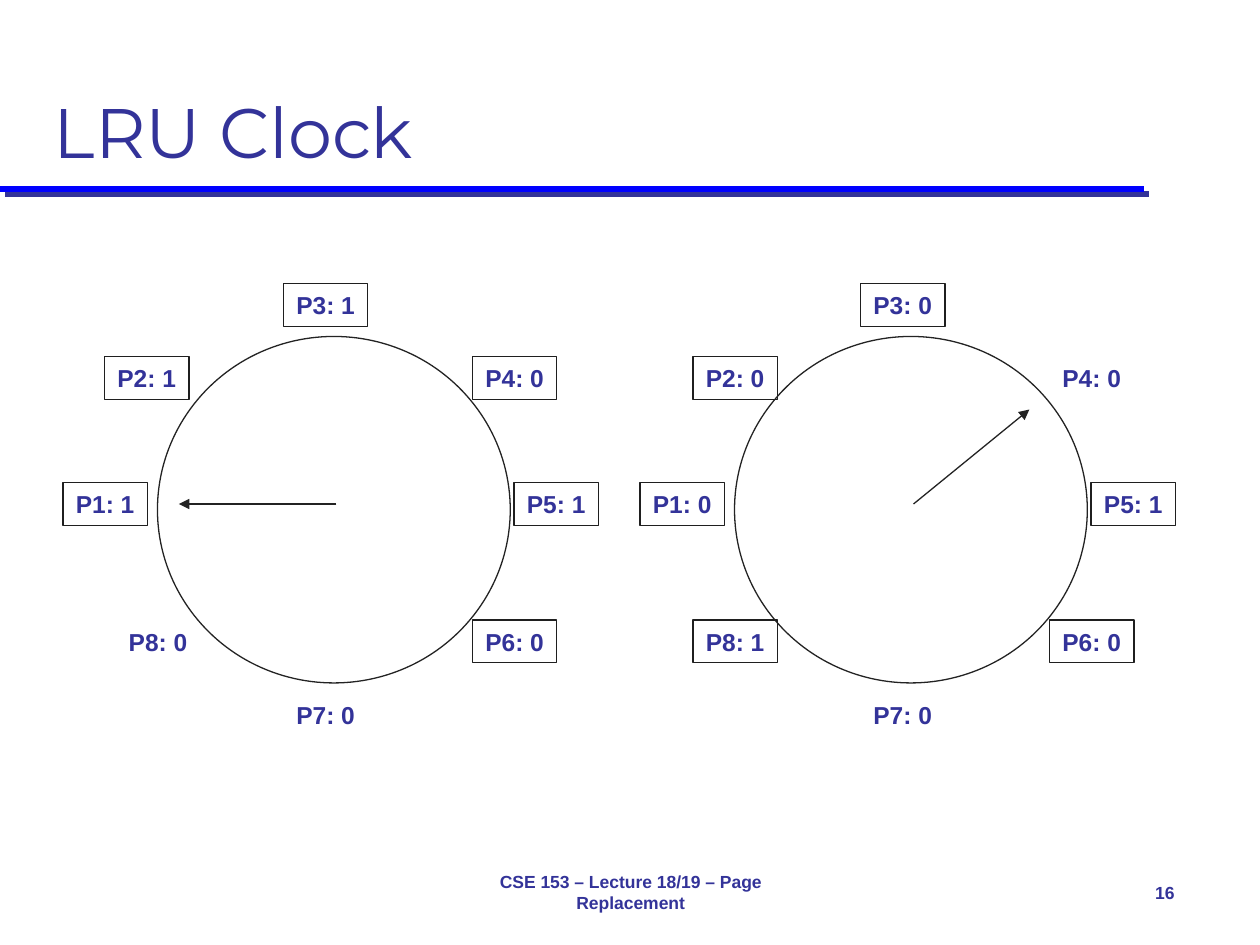
import lxml.etree
import pptx
import pptx.dml.color
import pptx.enum.shapes
import pptx.enum.text
import pptx.oxml.ns
import pptx.util

Inches = pptx.util.Inches
Pt = pptx.util.Pt
Align = pptx.enum.text.PP_ALIGN
Anchor = pptx.enum.text.MSO_ANCHOR
Shapes = pptx.enum.shapes.MSO_SHAPE

COLORS = {
    "text": "333399",
    "rule": "0000FF",
    "outline": "232323",
    "border": "1F1F1F",
    "paper": "FFFFFF",
}
LABEL_SIZE = (0.67, 0.34)
LABEL_SPOTS = {
    "P1": (0.5, 3.83),
    "P2": (0.83, 2.83),
    "P3": (2.25, 2.25),
    "P4": (3.75, 2.83),
    "P5": (4.08, 3.83),
    "P6": (3.75, 4.92),
    "P7": (2.25, 5.5),
    "P8": (0.92, 4.92),
}
CLOCKS = [
    {
        "offset": 0,
        "bits": "11101000",
        "unboxed": {"P7", "P8"},
        "hand": ((2.67, 4), (1.42, 4)),
        "moved": {},
    },
    {
        "offset": 4.58,
        "bits": "00001001",
        "unboxed": {"P4", "P7"},
        "hand": ((2.67, 4), (3.59, 3.25)),
        "moved": {"P2": (0.92, 2.83)},
    },
]


def color(name):
    return pptx.dml.color.RGBColor.from_string(COLORS[name])


def write_text(shape, text, size=14, font="Arial", bold=True, align=Align.CENTER,
               anchor=Anchor.MIDDLE, wrap=True, side=0.1):
    frame = shape.text_frame
    frame.word_wrap = wrap
    frame.vertical_anchor = anchor
    frame.margin_left = frame.margin_right = Inches(side)
    frame.margin_top = frame.margin_bottom = Inches(0.05)
    para = frame.paragraphs[0]
    para.alignment = align
    span = para.add_run()
    span.text = text
    span.font.size = Pt(size)
    span.font.name = font
    span.font.bold = bold
    span.font.color.rgb = color("text")


class ClockPage:
    def __init__(self, page):
        self.page = page

    def text(self, text, left, top, width, height, **style):
        box = self.page.shapes.add_textbox(*map(Inches, (left, top, width, height)))
        write_text(box, text, **style)

    def shape(self, kind, left, top, width, height, line, fill=None):
        shape = self.page.shapes.add_shape(kind, *map(Inches, (left, top, width, height)))
        shape.shadow.inherit = False
        if fill:
            shape.fill.solid()
            shape.fill.fore_color.rgb = color(fill)
        else:
            shape.fill.background()
        shape.line.color.rgb = color(line)
        shape.line.width = Pt(0.75)
        return shape

    def line(self, start, end, line="outline", width=0.75, arrow=False, shadow=None):
        connector = self.page.shapes.add_connector(
            pptx.enum.shapes.MSO_CONNECTOR.STRAIGHT, *map(Inches, (*start, *end)))
        connector.line.color.rgb = color(line)
        connector.line.width = Pt(width)
        name = pptx.oxml.ns.qn
        if arrow:
            lxml.etree.SubElement(connector.line._get_or_add_ln(), name("a:tailEnd"), type="triangle")
        effects = lxml.etree.SubElement(connector._element.spPr, name("a:effectLst"))
        if shadow:
            cast = lxml.etree.SubElement(effects, name("a:outerShdw"), blurRad="0",
                                         dist=str(Pt(4.2)), dir="2700000", algn="ctr", rotWithShape="0")
            lxml.etree.SubElement(cast, name("a:srgbClr"), val=COLORS[shadow])

    def label(self, text, left, top, boxed):
        if boxed:
            box = self.shape(Shapes.RECTANGLE, left, top, *LABEL_SIZE, line="border")
            write_text(box, text, side=0)
        else:
            self.text(text, left, top, *LABEL_SIZE, side=0)

    def clock(self, offset, bits, unboxed, hand, moved):
        self.shape(Shapes.OVAL, 1.25 + offset, 2.67, 2.8, 2.75, line="outline", fill="paper")
        spots = {**LABEL_SPOTS, **moved}
        for (name, (left, top)), bit in zip(spots.items(), bits):
            self.label(f"{name}: {bit}", left + offset, top, name not in unboxed)
        start, end = [(x + offset, y) for x, y in hand]
        self.line(start, end, arrow=True)


def main():
    deck = pptx.Presentation()
    deck.slide_width, deck.slide_height = Inches(10), Inches(7.5)
    page = ClockPage(deck.slides.add_slide(deck.slide_layouts[6]))
    page.line((0, 1.5), (9.08, 1.5), line="rule", width=3.5, shadow="text")
    page.text("LRU Clock", 0.33, 0.17, 9.33, 1.25, size=40, font="Montserrat",
              bold=False, align=Align.LEFT, anchor=Anchor.BOTTOM)
    page.text("CSE 153 – Lecture 18/19 – Page Replacement", 3.42, 6.83, 3.17, 0.5,
              size=10, wrap=False)
    page.text("16", 8.75, 6.83, 0.67, 0.5, size=10, align=Align.RIGHT, wrap=False)
    for clock in CLOCKS:
        page.clock(**clock)
    deck.save("out.pptx")


if __name__ == "__main__":
    main()
